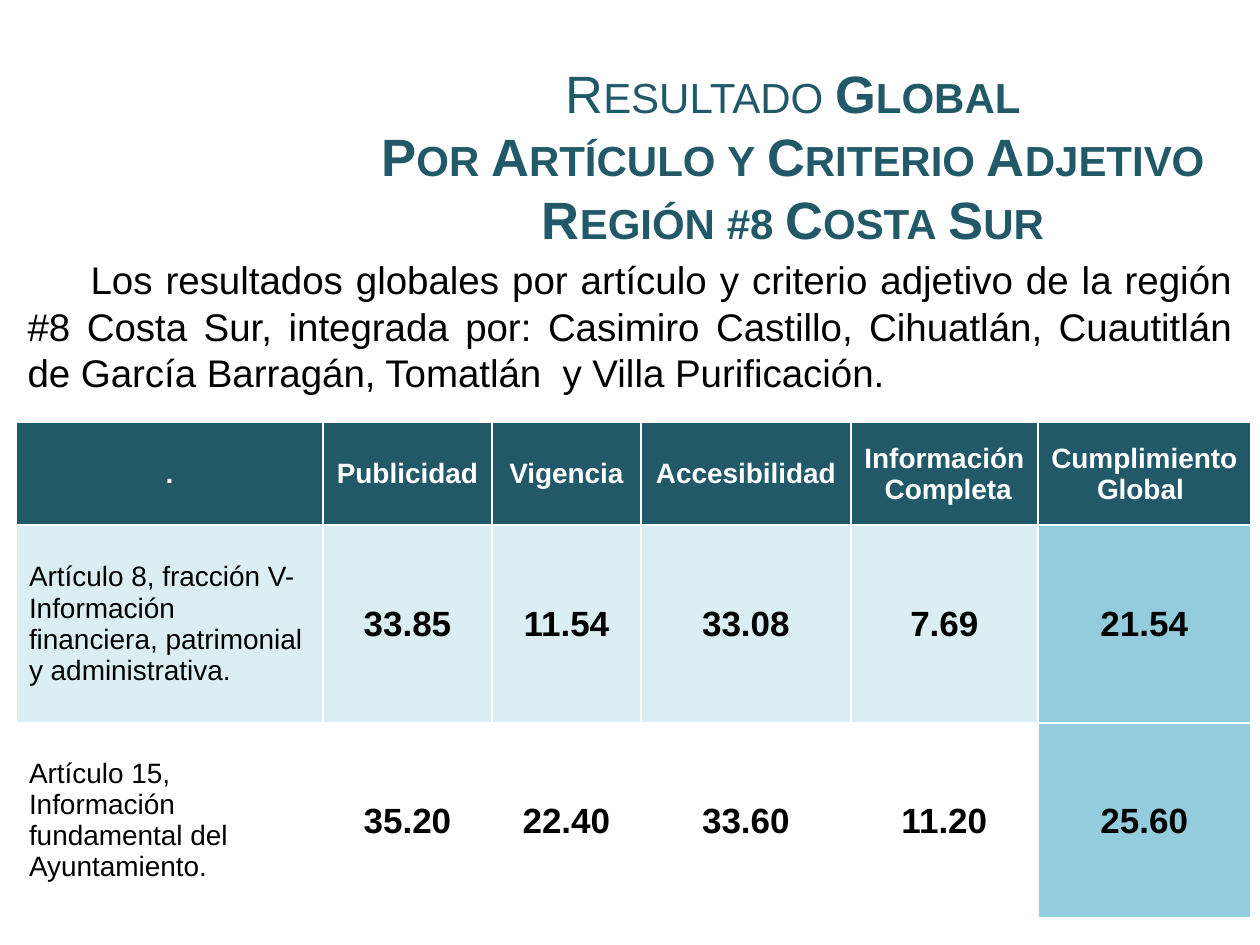
from lxml.etree import SubElement
from pptx import Presentation
from pptx.dml.color import RGBColor
from pptx.enum.text import MSO_ANCHOR, MSO_AUTO_SIZE, PP_ALIGN
from pptx.oxml.ns import qn
from pptx.util import Emu, Pt

WHITE = RGBColor(0xFF, 0xFF, 0xFF)
BLACK = RGBColor(0x00, 0x00, 0x00)
TEAL = RGBColor(0x21, 0x59, 0x68)
PALE = RGBColor(0xDB, 0xEE, 0xF4)
SKY = RGBColor(0x93, 0xCD, 0xDD)

HEADERS = [".", "Publicidad", "Vigencia", "Accesibilidad",
           "Información\v Completa", "Cumplimiento Global "]
ARTICLES = [
    ["Artículo 8, fracción V- Información financiera, patrimonial y administrativa.",
     "33.85", "11.54", "33.08", "7.69", "21.54"],
    ["Artículo 15, Información fundamental del Ayuntamiento.",
     "35.20", "22.40", "33.60", "11.20", "25.60"],
]
COLUMN_WIDTHS = [307, 169, 149, 210, 187, 213]
ROW_HEIGHTS = [103, 198, 195]


def px(length):
    return Emu(round(length * 914400 / 126))


def place(shape, box):
    shape.left, shape.top, shape.width, shape.height = map(px, box)


def style(span, size, color, bold=False):
    span.font.name = "Arial"
    span.font.size = Pt(size)
    span.font.bold = bold
    span.font.color.rgb = color


def prepare_frame(shape):
    frame = shape.text_frame
    frame.word_wrap = True
    frame.auto_size = MSO_AUTO_SIZE.NONE
    frame.vertical_anchor = MSO_ANCHOR.TOP
    return frame


def add_title(page, box):
    title = page.shapes.title
    place(title, box)
    frame = prepare_frame(title)
    frame.text = "Resultado\nRegión #8 Costa Sur"
    first, last = frame.paragraphs
    first.add_run().text = " Global"
    first.add_line_break()
    first.add_run().text = "Por Artículo y Criterio Adjetivo"
    for para in (first, last):
        para.alignment = PP_ALIGN.CENTER
        for span in para.runs:
            style(span, 30, TEAL, bold=span.text != "Resultado")
            span._r.get_or_add_rPr().set("cap", "small")


def add_introduction(page, box):
    body = page.placeholders[1]
    place(body, box)
    body.fill.solid()
    body.fill.fore_color.rgb = WHITE
    para = prepare_frame(body).paragraphs[0]
    # Plain paragraph: no bullet, no hanging indent, one tab stop
    properties = para._p.get_or_add_pPr()
    properties.set("marL", "0")
    properties.set("indent", "0")
    SubElement(properties, qn("a:buNone"))
    tabs = SubElement(properties, qn("a:tabLst"))
    SubElement(tabs, qn("a:tab"), pos=str(px(126)), algn="l")
    para.alignment = PP_ALIGN.JUSTIFY
    para.space_before = Pt(0)
    para.add_run().text = "\t"
    para.add_run().text = (
        "Los resultados globales por artículo y criterio adjetivo de la región #8 "
        "Costa Sur, integrada por: Casimiro Castillo, Cihuatlán, Cuautitlán de "
        "García Barragán, Tomatlán  y Villa Purificación.")
    for span, size in zip(para.runs, (24, 22)):
        style(span, size, BLACK)


def add_borders(cell):
    properties = cell._tc.get_or_add_tcPr()
    for position, side in enumerate(("lnL", "lnR", "lnT", "lnB")):
        line = properties.makeelement(qn(f"a:{side}"), {"w": str(Pt(1))})
        fill = SubElement(line, qn("a:solidFill"))
        SubElement(fill, qn("a:srgbClr"), val=str(WHITE))
        properties.insert(position, line)


def fill_cell(cell, text, fill, size, color, bold, centered):
    cell.fill.solid()
    cell.fill.fore_color.rgb = fill
    add_borders(cell)
    cell.vertical_anchor = MSO_ANCHOR.MIDDLE
    side, top, bottom = (1, 1, 0) if centered else (13, 6, 6)
    cell.margin_left = cell.margin_right = px(side)
    cell.margin_top, cell.margin_bottom = px(top), px(bottom)
    para = cell.text_frame.paragraphs[0]
    para.text = text
    para.alignment = PP_ALIGN.CENTER if centered else PP_ALIGN.LEFT
    for span in para.runs:
        style(span, size, color, bold)


def add_results(page, box):
    rows = [HEADERS, *ARTICLES]
    table = page.shapes.add_table(len(rows), len(HEADERS), *map(px, box)).table
    for column, width in zip(table.columns, COLUMN_WIDTHS):
        column.width = px(width)
    for row, height in zip(table.rows, ROW_HEIGHTS):
        row.height = px(height)
    last = len(HEADERS) - 1
    for r, (texts, row_fill) in enumerate(zip(rows, (TEAL, PALE, WHITE))):
        for c, text in enumerate(texts):
            cell = table.cell(r, c)
            if r == 0:
                fill_cell(cell, text, row_fill, 16, WHITE, True, True)
            elif c == 0:
                fill_cell(cell, text, row_fill, 16, BLACK, False, False)
            else:
                fill = SKY if c == last else row_fill
                fill_cell(cell, text, fill, 20, BLACK, True, True)


def main():
    deck = Presentation()
    deck.slide_width, deck.slide_height = px(1260), px(945)
    page = deck.slides.add_slide(deck.slide_layouts[1])
    add_introduction(page, (15, 246, 1230, 176))
    add_results(page, (16, 422, sum(COLUMN_WIDTHS), sum(ROW_HEIGHTS)))
    add_title(page, (330, 55, 926, 191))
    deck.save("out.pptx")


if __name__ == "__main__":
    main()
